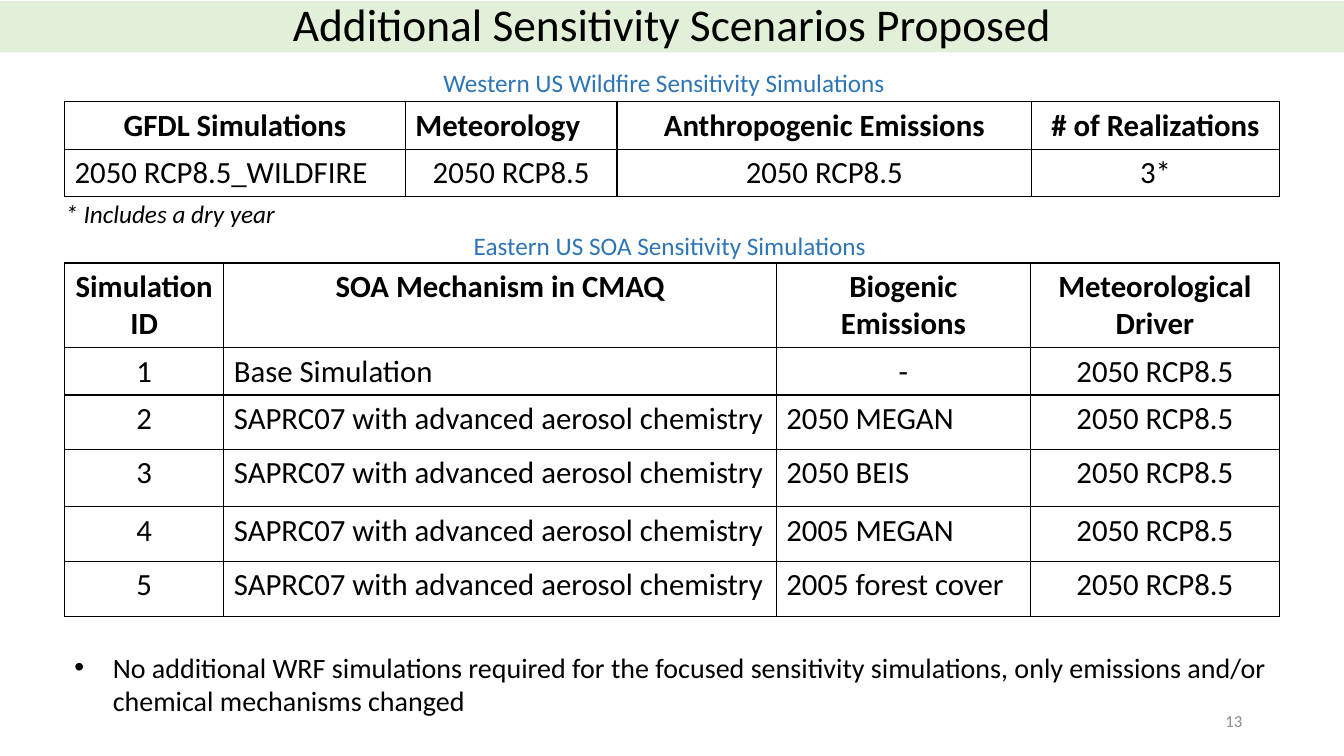
from lxml import etree
from pptx import Presentation, oxml
from pptx.dml.color import RGBColor
from pptx.enum import text as t
from pptx.oxml import ns
from pptx.util import Inches, Pt

HUES = {"ink": "000000", "band": "E2F0D9", "head": "2E75B6", "page": "8C8C8C"}
SIDES = {"l": t.PP_ALIGN.LEFT, "c": t.PP_ALIGN.CENTER, "r": t.PP_ALIGN.RIGHT}
FONT = "Calibri"
LEFT, WIDTH = 0.64, 12.05
MET = "2050 RCP8.5"
SOA = "SAPRC07 with advanced aerosol chemistry"

FIRE = [
    ("clcc", ["GFDL Simulations", "Meteorology", "Anthropogenic Emissions", "# of Realizations"]),
    ("lccc", ["2050 RCP8.5_WILDFIRE", MET, MET, "3*"]),
]
BIO = ["2050 MEGAN", "2050 BEIS", "2005 MEGAN", "2005 forest cover"]
AEROSOL = [
    ("cccc", ["Simulation ID", "SOA Mechanism in CMAQ", "Biogenic Emissions", "Meteorological Driver"]),
    ("clcc", ["1", "Base Simulation", "-", MET]),
] + [("cllc", [str(num), SOA, bio, MET]) for num, bio in enumerate(BIO, 2)]


def write(para, words, size, hue="ink", side="l", bold=False, slant=False):
    """Add one styled run to a paragraph."""
    para.alignment = SIDES[side]
    run = para.add_run()
    run.text = words
    font = run.font
    font.name, font.size = FONT, Pt(size)
    font.bold, font.italic = bold, slant
    font.color.rgb = RGBColor.from_string(HUES[hue])


def title(slide, box, words):
    """Format the title placeholder as a pale band."""
    band = slide.shapes.title
    band.left, band.top, band.width, band.height = map(Inches, box)
    band.fill.solid()
    band.fill.fore_color.rgb = RGBColor.from_string(HUES["band"])
    frame = band.text_frame
    frame.auto_size = t.MSO_AUTO_SIZE.NONE
    frame.vertical_anchor = t.MSO_ANCHOR.MIDDLE
    para = frame.paragraphs[0]
    para.line_spacing = 0.9
    write(para, words, 32.4, side="c")


def label(slide, box, words, size, wrap=True, mid=False, **look):
    """Place a text box and return its paragraph."""
    frame = slide.shapes.add_textbox(*map(Inches, box)).text_frame
    frame.word_wrap = wrap
    frame.vertical_anchor = t.MSO_ANCHOR.MIDDLE if mid else t.MSO_ANCHOR.TOP
    para = frame.paragraphs[0]
    write(para, words, size, **look)
    return para


def bullet(slide, box, words):
    """Place a bulleted note with a hanging indent."""
    props = label(slide, box, words, 20)._p.get_or_add_pPr()
    props.set("marL", str(Inches(0.38)))
    props.set("indent", str(Inches(-0.38)))
    etree.SubElement(props, ns.qn("a:buFont")).set("typeface", "Arial")
    etree.SubElement(props, ns.qn("a:buChar")).set("char", "•")


def border(cell):
    """Draw a thin line on all four sides of a cell."""
    props = cell._tc.get_or_add_tcPr()
    for spot, side in enumerate("LRTB"):
        props.insert(spot, oxml.parse_xml(
            f'<a:ln{side} {ns.nsdecls("a")} w="{Pt(1)}"><a:solidFill>'
            f'<a:srgbClr val="{HUES["ink"]}"/></a:solidFill></a:ln{side}>'))


def grid(slide, box, data, cols, rows):
    """Place a ruled table with a bold header row."""
    table = slide.shapes.add_table(len(rows), len(cols), *map(Inches, box)).table
    table.first_row = table.horz_banding = False
    for col, wide in zip(table.columns, cols):
        col.width = Inches(wide)
    for row, tall in zip(table.rows, rows):
        row.height = Inches(tall)
    for r, (sides, words) in enumerate(data):
        for c, (side, word) in enumerate(zip(sides, words)):
            cell = table.cell(r, c)
            cell.fill.background()
            border(cell)
            write(cell.text_frame.paragraphs[0], word, 22, side=side, bold=r == 0)
    return table


def fire(slide, x, y):
    """Place the wildfire heading, table and footnote."""
    label(slide, (x + 3.66, y, 5.16, 0.4), "Western US Wildfire Sensitivity Simulations", 18, hue="head")
    table = grid(slide, (x, y + 0.39, WIDTH, 0.94), FIRE, [3.38, 2.1, 4.11, 2.46], [0.47, 0.47])
    table.cell(1, 3).vertical_anchor = t.MSO_ANCHOR.MIDDLE
    label(slide, (x - 0.09, y + 1.3, 2.3, 0.4), "* Includes a dry year", 18, wrap=False, slant=True)


def aerosol(slide, x, y):
    """Place the aerosol heading and table."""
    label(slide, (x + 3.96, y, 4.57, 0.4), "Eastern US SOA Sensitivity Simulations", 18, hue="head")
    grid(slide, (x, y + 0.37, WIDTH, 3.5), AEROSOL, [1.58, 5.48, 2.52, 2.47],
         [0.84, 0.47, 0.54, 0.57, 0.54, 0.55])


def main():
    """Build and save the slide."""
    deck = Presentation()
    deck.slide_width, deck.slide_height = Inches(13.33), Inches(7.5)
    slide = deck.slides.add_slide(deck.slide_layouts[5])
    title(slide, (0, 0.01, 13.33, 0.51), "Additional Sensitivity Scenarios Proposed")
    fire(slide, LEFT, 0.62)
    aerosol(slide, LEFT, 2.24)
    bullet(slide, (LEFT, 6.4, WIDTH, 0.77),
           "No additional WRF simulations required for the focused sensitivity simulations, "
           "only emissions and/or chemical mechanisms changed")
    label(slide, (9.42, 6.95, 3, 0.4), "13", 12, mid=True, hue="page", side="r")
    deck.save("out.pptx")


if __name__ == "__main__":
    main()
